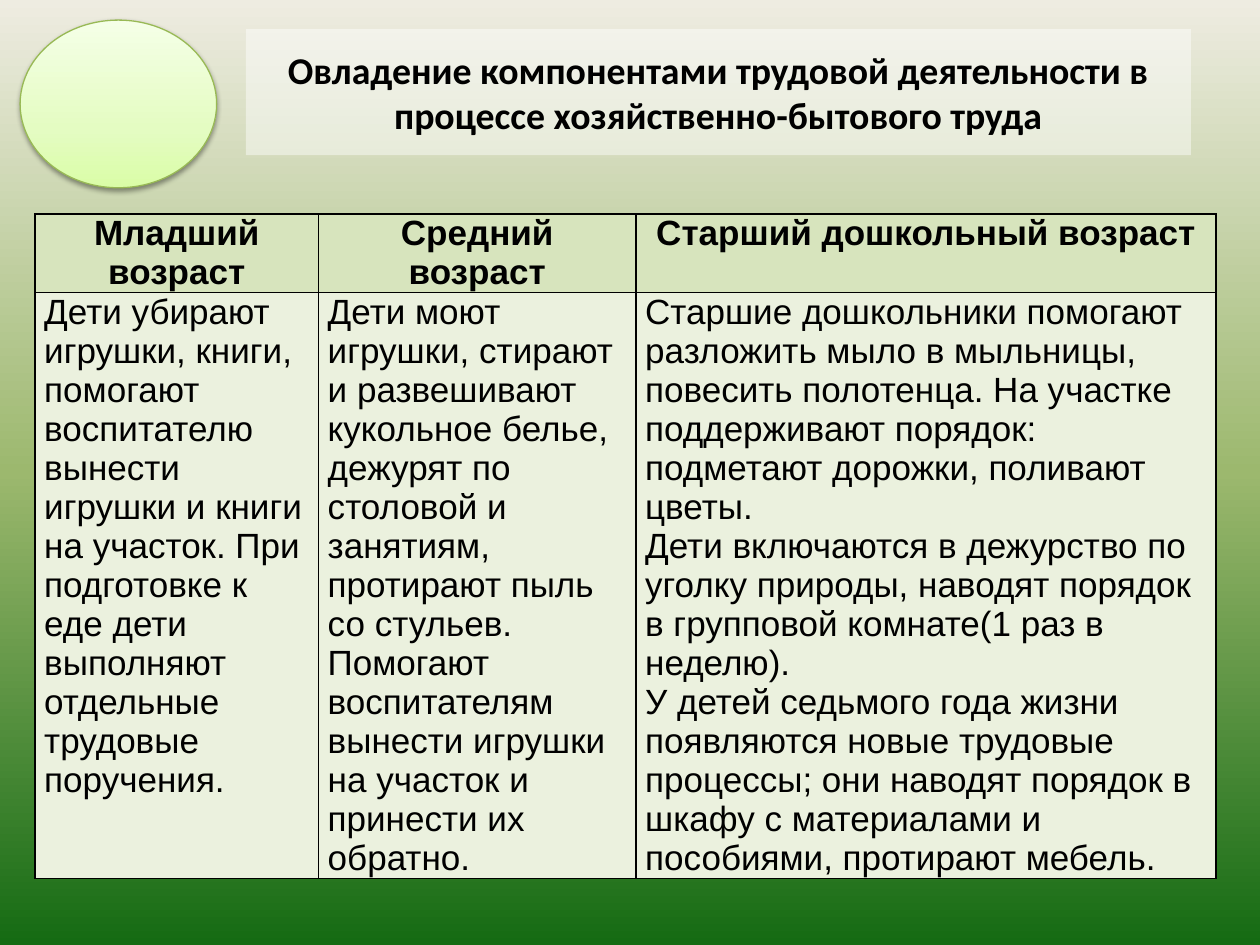
from copy import deepcopy

from lxml import etree
from pptx import Presentation
from pptx.dml.color import RGBColor
from pptx.enum import shapes, text
from pptx.oxml import ns, parse_xml
from pptx.util import Pt

BLACK = RGBColor(0x00, 0x00, 0x00)
WHITE = RGBColor(0xFF, 0xFF, 0xFF)
OVAL_LINE = RGBColor(0x98, 0xB9, 0x55)
HEADER_FILL = RGBColor(0xD7, 0xE4, 0xBD)
BODY_FILL = RGBColor(0xEB, 0xF1, 0xDE)
BACKDROP_STOPS = [
    (0, RGBColor(0xEE, 0xEC, 0xE1)),
    (0.5, RGBColor(0x9C, 0xB8, 0x6E)),
    (1, RGBColor(0x15, 0x6B, 0x13)),
]
OVAL_STOPS = [
    (0, RGBColor(0xDA, 0xFD, 0xA7)),
    (0.35, RGBColor(0xE4, 0xFC, 0xC2)),
    (1, RGBColor(0xF5, 0xFF, 0xE7)),
]

HEADING = "Овладение компонентами трудовой деятельности в процессе хозяйственно-бытового труда"
AGE_GROUPS = [
    ("Младший возраст", 162, [
        "Дети убирают игрушки, книги, помогают воспитателю вынести игрушки и книги "
        "на участок. При подготовке к еде дети выполняют отдельные трудовые поручения.",
    ]),
    ("Средний возраст", 181.4, [
        "Дети моют игрушки, стирают и развешивают кукольное белье, дежурят по столовой "
        "и занятиям, протирают пыль со стульев. Помогают воспитателям вынести игрушки "
        "на участок и принести их обратно.",
    ]),
    ("Старший дошкольный возраст", 331.4, [
        "Старшие дошкольники помогают разложить мыло в мыльницы, повесить полотенца. "
        "На участке поддерживают порядок: подметают дорожки, поливают цветы.",
        "Дети включаются в дежурство по уголку природы, наводят порядок "
        "в групповой комнате(1 раз в неделю).",
        "У детей седьмого года жизни появляются новые трудовые процессы; они наводят "
        "порядок в шкафу с материалами и пособиями, протирают мебель.",
    ]),
]
ROW_HEIGHTS = (44.6, 335)

CELL_FORMAT = {
    "margin_left": Pt(5.3), "margin_right": Pt(5.3),
    "margin_top": 0, "margin_bottom": 0,
    "vertical_anchor": text.MSO_ANCHOR.TOP,
}
SHADOW = (
    f'<a:effectLst {ns.nsdecls("a")}>'
    f'<a:outerShdw blurRad="{Pt(3.1)}" dist="{Pt(1.6)}" dir="5400000" rotWithShape="0">'
    '<a:srgbClr val="000000"><a:alpha val="38000"/></a:srgbClr>'
    '</a:outerShdw></a:effectLst>'
)


def apply_format(target, values):
    for name, value in values.items():
        setattr(target, name, value)


def format_font(font, face, size, bold):
    apply_format(font, {"name": face, "size": Pt(size), "bold": bold})
    font.color.rgb = BLACK


def fill_gradient(fill, owner, stops, angle):
    """Fill with three colour stops; the angle runs counter-clockwise."""
    fill.gradient()
    fill.gradient_angle = angle
    stop_list = owner.xpath(".//a:gsLst")[0]
    stop_list.append(deepcopy(stop_list[0]))
    for stop, (position, color) in zip(fill.gradient_stops, stops):
        stop.position = position
        stop.color.rgb = color


def add_backdrop(slide):
    fill_gradient(slide.background.fill, slide.element, BACKDROP_STOPS, 270)


def add_oval(slide, box):
    oval = slide.shapes.add_shape(shapes.MSO_SHAPE.OVAL, *map(Pt, box))
    fill_gradient(oval.fill, oval.element, OVAL_STOPS, 90)
    oval.line.color.rgb = OVAL_LINE
    oval.line.width = Pt(0.75)
    oval.element.spPr.append(parse_xml(SHADOW))


def add_heading(slide, box):
    heading = slide.shapes.title
    apply_format(heading, dict(zip(("left", "top", "width", "height"), map(Pt, box))))

    # Translucent white panel
    heading.fill.solid()
    heading.fill.fore_color.rgb = WHITE
    color = heading.element.spPr.xpath("./a:solidFill/a:srgbClr")[0]
    etree.SubElement(color, ns.qn("a:alpha"), val="46000")

    frame = heading.text_frame
    frame.text = HEADING
    apply_format(frame, {
        "word_wrap": True,
        "auto_size": text.MSO_AUTO_SIZE.NONE,
        "vertical_anchor": text.MSO_ANCHOR.MIDDLE,
    })
    frame.paragraphs[0].alignment = text.PP_ALIGN.CENTER
    format_font(frame.paragraphs[0].font, "Calibri", 21.6, True)


def add_borders(cell):
    properties = cell._tc.get_or_add_tcPr()
    for side in "LRTB":
        properties.append(parse_xml(
            f'<a:ln{side} {ns.nsdecls("a")} w="{Pt(1)}"><a:solidFill>'
            f'<a:srgbClr val="{BLACK}"/></a:solidFill></a:ln{side}>'
        ))


def write_cell(cell, lines, fill, align, bold):
    apply_format(cell, CELL_FORMAT)
    add_borders(cell)
    cell.fill.solid()
    cell.fill.fore_color.rgb = fill
    cell.text_frame.text = "\n".join(lines)
    for paragraph in cell.text_frame.paragraphs:
        paragraph.alignment = align
        format_font(paragraph.font, "Arial", 20, bold)


def add_age_table(slide, box):
    table = slide.shapes.add_table(2, len(AGE_GROUPS), *map(Pt, box)).table
    table.horz_banding = False
    for row, height in zip(table.rows, ROW_HEIGHTS):
        row.height = Pt(height)
    for index, (age, width, duties) in enumerate(AGE_GROUPS):
        table.columns[index].width = Pt(width)
        write_cell(table.cell(0, index), [age], HEADER_FILL, text.PP_ALIGN.CENTER, True)
        write_cell(table.cell(1, index), duties, BODY_FILL, text.PP_ALIGN.LEFT, False)


def main():
    deck = Presentation()
    deck.slide_width, deck.slide_height = Pt(720), Pt(540)
    slide = deck.slides.add_slide(deck.slide_layouts[5])
    add_backdrop(slide)
    add_oval(slide, (11.5, 11.5, 112.3, 95.8))
    add_heading(slide, (140.5, 16.6, 540, 72))
    add_age_table(slide, (20, 122.4, 674.8, sum(ROW_HEIGHTS)))
    deck.save("out.pptx")


if __name__ == "__main__":
    main()
